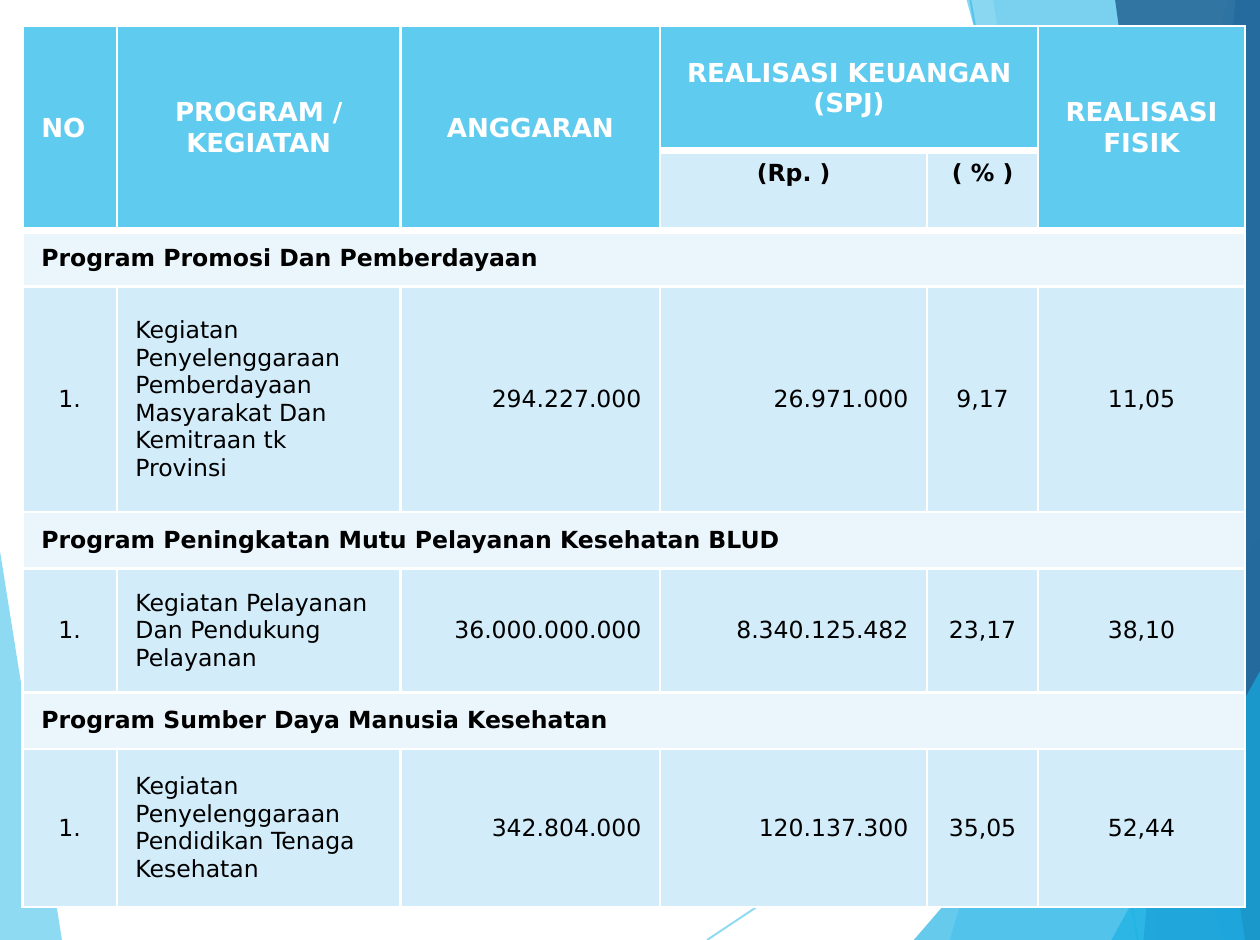
from dataclasses import dataclass

from lxml.etree import SubElement
from pptx import Presentation
from pptx.dml.color import RGBColor
from pptx.enum.shapes import MSO_CONNECTOR
from pptx.enum.text import MSO_ANCHOR, PP_ALIGN
from pptx.oxml.ns import qn
from pptx.util import Inches, Pt


@dataclass(frozen=True)
class Theme:
    font: str = "DejaVu Sans"
    header_size: int = 10
    body_size: int = 9
    sky: str = "5FCBEF"
    cyan: str = "17B0E4"
    blue: str = "2E83C3"
    navy: str = "226292"
    program_fill: str = "EAF6FC"
    activity_fill: str = "D2ECF9"
    white: str = "FFFFFF"
    black: str = "000000"
    thin: float = 1
    thick: float = 3


THEME = Theme()
LEFT, CENTER, RIGHT = PP_ALIGN.LEFT, PP_ALIGN.CENTER, PP_ALIGN.RIGHT
PAGE_WIDTH, PAGE_HEIGHT = 6.7, 5

# Background facets: colour, opacity in percent, corner points
LEFT_FACET = (THEME.sky, 70, [(0, 2.93), (0.33, 5), (0, 5)])
RIGHT_FACETS = [
    (THEME.sky, 36, [(6.53, 0), (5.05, 5), (6.7, 5), (6.7, 0)]),
    (THEME.sky, 20, [(5.28, 0), (6.16, 5), (6.7, 5), (6.7, 0)]),
    (THEME.cyan, 66, [(4.86, 5), (6.7, 2.86), (6.7, 5)]),
    (THEME.cyan, 50, [(5.14, 0), (6.5, 5), (6.7, 5), (6.7, 0)]),
    (THEME.blue, 70, [(6.57, 0), (6.08, 5), (6.7, 5), (6.7, 0)]),
    (THEME.navy, 82, [(5.93, 0), (6.62, 5), (6.7, 5), (6.7, 0)]),
    (THEME.cyan, 66, [(5.91, 5), (6.7, 3.57), (6.7, 5)]),
]
RAYS = [((3.76, 5), (6.7, 3.04)), ((5.16, 0), (6.05, 5))]

# Table content
COLUMN_WIDTHS = [0.5, 1.51, 1.38, 1.42, 0.59, 1.1]
ROW_HEIGHTS = [0.66, 0.42, 0.3, 1.2, 0.3, 0.66, 0.3, 0.84]
HEADER_ROWS = 2
HEADERS = [  # column, text, rows spanned, columns spanned, alignment
    (0, "NO", 2, 1, LEFT),
    (1, "PROGRAM /\nKEGIATAN", 2, 1, CENTER),
    (2, "ANGGARAN", 2, 1, CENTER),
    (3, "REALISASI KEUANGAN (SPJ)", 1, 2, CENTER),
    (5, "REALISASI FISIK", 2, 1, CENTER),
]
SUBHEADERS = [(3, "(Rp. )"), (4, "( % )")]
ACTIVITY_ALIGNMENTS = [CENTER, LEFT, RIGHT, RIGHT, CENTER, CENTER]
PROGRAMS = [
    ("Program Promosi Dan Pemberdayaan",
     ["1.", "Kegiatan Penyelenggaraan Pemberdayaan Masyarakat Dan Kemitraan tk Provinsi",
      "294.227.000", "26.971.000", "9,17", "11,05"]),
    ("Program Peningkatan Mutu Pelayanan Kesehatan BLUD",
     ["1.", "Kegiatan Pelayanan Dan Pendukung Pelayanan",
      "36.000.000.000", "8.340.125.482", "23,17", "38,10"]),
    ("Program Sumber Daya Manusia Kesehatan",
     ["1.", "Kegiatan Penyelenggaraan Pendidikan Tenaga Kesehatan",
      "342.804.000", "120.137.300", "35,05", "52,44"]),
]


def set_opacity(shape, percent):
    for color in shape._element.spPr.iter(qn("a:srgbClr")):
        SubElement(color, qn("a:alpha"), val=str(percent * 1000))


def add_facet(page, box, color, opacity, points):
    left, top = box[:2]
    corners = [(Inches(left + x), Inches(top + y)) for x, y in points]
    builder = page.shapes.build_freeform(*corners[0], scale=1.0)
    builder.add_line_segments(corners[1:], close=True)
    facet = builder.convert_to_shape()
    facet.shadow.inherit = False
    facet.fill.solid()
    facet.fill.fore_color.rgb = RGBColor.from_string(color)
    facet.line.fill.background()
    set_opacity(facet, opacity)


def add_ray(page, box, start, end):
    left, top = box[:2]
    ray = page.shapes.add_connector(
        MSO_CONNECTOR.STRAIGHT,
        Inches(left + start[0]), Inches(top + start[1]),
        Inches(left + end[0]), Inches(top + end[1]))
    ray.line.color.rgb = RGBColor.from_string(THEME.sky)
    ray.line.width = Pt(0.75)
    set_opacity(ray, 70)
    SubElement(ray._element.spPr, qn("a:effectLst"))


def add_background(page, box):
    add_facet(page, box, *LEFT_FACET)
    for start, end in RAYS:
        add_ray(page, box, start, end)
    for facet in RIGHT_FACETS:
        add_facet(page, box, *facet)


def set_borders(cell, top, bottom):
    properties = cell._tc.get_or_add_tcPr()
    widths = {"L": THEME.thin, "R": THEME.thin, "T": top, "B": bottom}
    for position, (side, width) in enumerate(widths.items()):
        line = SubElement(properties, qn(f"a:ln{side}"), w=str(Pt(width)))
        fill = SubElement(line, qn("a:solidFill"))
        SubElement(fill, qn("a:srgbClr"), val=THEME.white)
        properties.insert(position, line)


def fill_cell(cell, text, fill, align, size=THEME.body_size, color=THEME.black,
              bold=False, anchor=MSO_ANCHOR.MIDDLE):
    cell.fill.solid()
    cell.fill.fore_color.rgb = RGBColor.from_string(fill)
    cell.vertical_anchor = anchor
    cell.text_frame.text = text
    for para in cell.text_frame.paragraphs:
        para.alignment = align
        for span in para.runs:
            span.font.name = THEME.font
            span.font.size = Pt(size)
            span.font.bold = bold
            span.font.color.rgb = RGBColor.from_string(color)


def add_budget_table(page, box):
    frame = page.shapes.add_table(len(ROW_HEIGHTS), len(COLUMN_WIDTHS),
                                  *(Inches(length) for length in box))
    table = frame.table
    table.first_row = table.horz_banding = False
    for column, width in zip(table.columns, COLUMN_WIDTHS):
        column.width = Inches(width)
    for row, height in zip(table.rows, ROW_HEIGHTS):
        row.height = Inches(height)

    # Header rows
    for column, text, rows, columns, align in HEADERS:
        cell = table.cell(0, column)
        cell.merge(table.cell(rows - 1, column + columns - 1))
        fill_cell(cell, text, THEME.sky, align, THEME.header_size, THEME.white, bold=True)
    for column, text in SUBHEADERS:
        fill_cell(table.cell(1, column), text, THEME.activity_fill, CENTER,
                  bold=True, anchor=MSO_ANCHOR.TOP)

    # A program title row followed by its activity row
    for index, (program, activity) in enumerate(PROGRAMS):
        title_row = HEADER_ROWS + 2 * index
        title = table.cell(title_row, 0)
        title.merge(table.cell(title_row, len(COLUMN_WIDTHS) - 1))
        fill_cell(title, program, THEME.program_fill, LEFT, bold=True)
        for column, (text, align) in enumerate(zip(activity, ACTIVITY_ALIGNMENTS)):
            fill_cell(table.cell(title_row + 1, column), text, THEME.activity_fill, align)

    # White grid, heavier below the header rows
    for index, row in enumerate(table.rows):
        top = THEME.thick if 0 < index <= HEADER_ROWS else THEME.thin
        bottom = THEME.thick if index < HEADER_ROWS else THEME.thin
        for cell in row.cells:
            set_borders(cell, top, bottom)


def main():
    deck = Presentation()
    deck.slide_width = Inches(PAGE_WIDTH)
    deck.slide_height = Inches(PAGE_HEIGHT)
    page = deck.slides.add_slide(deck.slide_layouts[6])
    add_background(page, (0, 0, PAGE_WIDTH, PAGE_HEIGHT))
    add_budget_table(page, (0.12, 0.14, sum(COLUMN_WIDTHS), sum(ROW_HEIGHTS)))
    deck.save("out.pptx")


if __name__ == "__main__":
    main()
